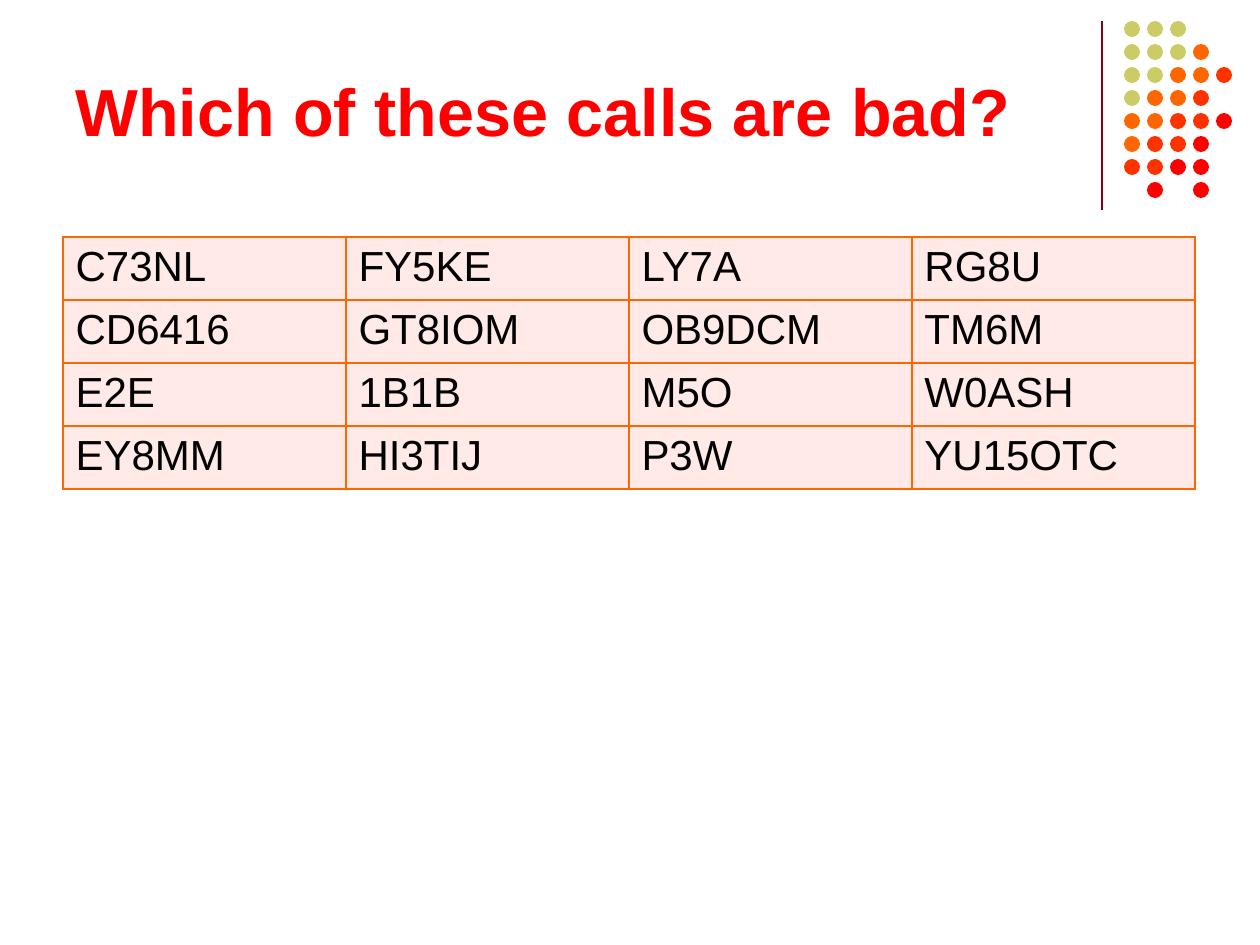
from lxml.etree import SubElement
from pptx import Presentation
from pptx.dml.color import RGBColor
from pptx.enum.shapes import MSO_CONNECTOR, MSO_SHAPE
from pptx.enum.text import MSO_ANCHOR
from pptx.oxml.ns import qn
from pptx.util import Emu, Pt

TITLE = "Which of these calls are bad?"
CALLS = [
    ["C73NL", "FY5KE", "LY7A", "RG8U"],
    ["CD6416", "GT8IOM", "OB9DCM", "TM6M"],
    ["E2E", "1B1B", "M5O", "W0ASH"],
    ["EY8MM", "HI3TIJ", "P3W", "YU15OTC"],
]
OLIVE = RGBColor(0xCC, 0xCC, 0x66)
ORANGE = RGBColor(0xFF, 0x66, 0x00)
VERMILION = RGBColor(0xFF, 0x33, 0x00)
RED = RGBColor(0xFF, 0x00, 0x00)
MAROON = RGBColor(0x86, 0x00, 0x1A)
PINK = RGBColor(0xFF, 0xEA, 0xE7)
BLACK = RGBColor(0x00, 0x00, 0x00)

DOT_COLORS = {"y": OLIVE, "o": ORANGE, "v": VERMILION, "r": RED}
DOT_ROWS = ["yyy", "yyyo", "yyoov", "yoov", "oovvr", "ovvr", "vvrr", " r r"]
DOT_LEFT, DOT_TOP, DOT_SIZE, DOT_PITCH = 1124, 21, 16, 23
TABLE_LEFT, TABLE_TOP, COLUMN_WIDTH, ROW_HEIGHT = 63, 237, 1134 // 4, 59
FONT = "Arial"


def px(*lengths):
    """Turn pixels, at 126 to the inch, into a list of EMU."""
    return [Emu(round(length * 914400 / 126)) for length in lengths]


def style(para, size, color, bold=False):
    para.font.name = FONT
    para.font.size = Pt(size)
    para.font.color.rgb = color
    para.font.bold = bold


def add_rule(slide):
    rule = slide.shapes.add_connector(MSO_CONNECTOR.STRAIGHT, *px(1102, 21, 1102, 210))
    rule.line.color.rgb = MAROON
    rule.line.width = Pt(0.75)
    SubElement(rule._element.spPr, qn("a:effectLst"))


def add_dots(slide):
    group = slide.shapes.add_group_shape()
    for row, keys in enumerate(DOT_ROWS):
        for column, key in enumerate(keys):
            if key not in DOT_COLORS:
                continue
            left = DOT_LEFT + column * DOT_PITCH
            top = DOT_TOP + row * DOT_PITCH
            dot = group.shapes.add_shape(MSO_SHAPE.OVAL, *px(left, top, DOT_SIZE, DOT_SIZE))
            dot.shadow.inherit = False
            dot.fill.solid()
            dot.fill.fore_color.rgb = DOT_COLORS[key]
            dot.line.fill.background()


def add_title(slide):
    frame = slide.shapes.add_textbox(*px(63, 42, 1029, 136)).text_frame
    frame.word_wrap = True
    frame.vertical_anchor = MSO_ANCHOR.MIDDLE
    frame.text = TITLE
    style(frame.paragraphs[0], 38, RED, bold=True)


def fill_cell(cell, text):
    cell.text = text
    style(cell.text_frame.paragraphs[0], 24, BLACK)
    properties = cell._tc.get_or_add_tcPr()
    for side in ("a:lnL", "a:lnR", "a:lnT", "a:lnB"):
        border = SubElement(properties, qn(side), w=str(Pt(1)))
        border_fill = SubElement(border, qn("a:solidFill"))
        SubElement(border_fill, qn("a:srgbClr"), val=str(ORANGE))
    cell.fill.solid()
    cell.fill.fore_color.rgb = PINK


def add_calls(slide):
    rows, columns = len(CALLS), len(CALLS[0])
    place = px(TABLE_LEFT, TABLE_TOP, COLUMN_WIDTH * columns, ROW_HEIGHT * rows)
    table = slide.shapes.add_table(rows, columns, *place).table
    table.first_row = False
    table.horz_banding = False
    for row, calls in enumerate(CALLS):
        for column, call in enumerate(calls):
            fill_cell(table.cell(row, column), call)


def main():
    deck = Presentation()
    deck.slide_width, deck.slide_height = px(1260, 945)
    slide = deck.slides.add_slide(deck.slide_layouts[6])
    add_rule(slide)
    add_dots(slide)
    add_title(slide)
    add_calls(slide)
    deck.save("out.pptx")


if __name__ == "__main__":
    main()
